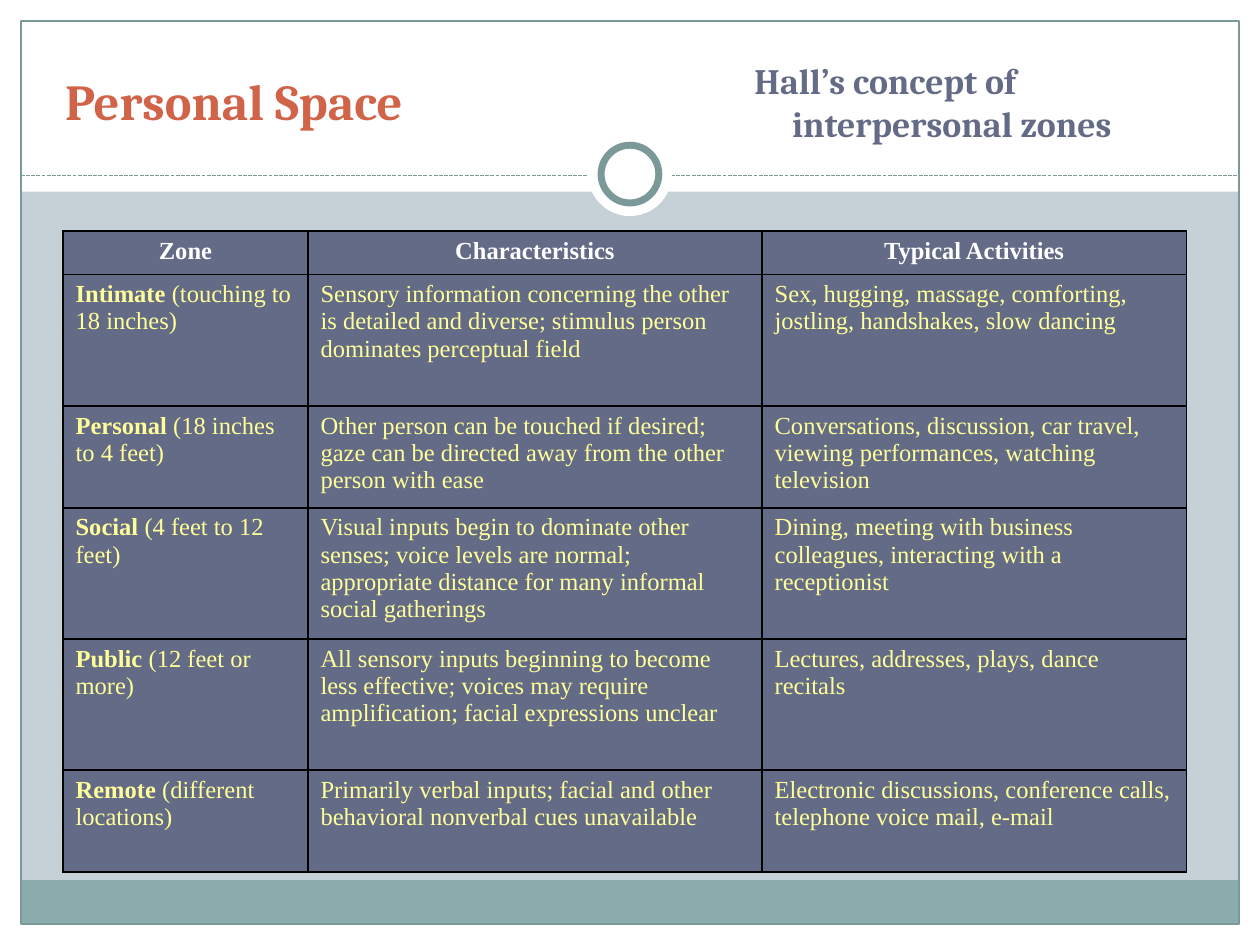
from typing import NamedTuple, Optional

from lxml import etree
from pptx import Presentation
from pptx.dml.color import RGBColor
from pptx.enum.dml import MSO_LINE
from pptx.enum.shapes import MSO_CONNECTOR, MSO_SHAPE
from pptx.enum.text import MSO_ANCHOR, MSO_AUTO_SIZE, PP_ALIGN
from pptx.oxml.ns import qn
from pptx.util import Pt

RECTANGLE, OVAL = MSO_SHAPE.RECTANGLE, MSO_SHAPE.OVAL
STRAIGHT = MSO_CONNECTOR.STRAIGHT
DASHED = MSO_LINE.SQUARE_DOT
LEFT, CENTER = PP_ALIGN.LEFT, PP_ALIGN.CENTER
BOTTOM = MSO_ANCHOR.BOTTOM
NO_AUTOFIT = MSO_AUTO_SIZE.NONE
TITLE_ONLY = 5

HEADING_FONT, TABLE_FONT = "Cambria", "Times New Roman"
COLORS = {
    "background": "C5D1D7", "white": "FFFFFF", "footer": "8CADAE",
    "frame": "7C999A", "title": "D16349", "slate": "646B86",
    "cell text": "FFFF99", "border": "000000",
}
WIDTH, HEIGHT, MARGIN = 720, 540, 12


class Panel(NamedTuple):
    left: float
    top: float
    width: float
    height: float
    fill: Optional[str] = None
    line: Optional[str] = None
    line_width: float = 0.75
    kind: int = RECTANGLE


class Zone(NamedTuple):
    name: str
    distance: str
    characteristics: str
    activities: str
    height: float


INNER_WIDTH = WIDTH - 2 * MARGIN
FRAME_PANELS = [
    Panel(0, HEIGHT - MARGIN, WIDTH, MARGIN, "white"),
    Panel(0, 0, WIDTH, 109.5, "white"),
    Panel(0, 0, MARGIN, HEIGHT, "white"),
    Panel(WIDTH - MARGIN, 0, MARGIN, HEIGHT, "white"),
    Panel(MARGIN, 503, INNER_WIDTH, 25, "footer"),
    Panel(MARGIN, MARGIN, INNER_WIDTH, HEIGHT - 2 * MARGIN, line="frame"),
]
RING_PANELS = [
    Panel(336, 75.5, 48, 48, "white", kind=OVAL),
    Panel(343.5, 83, 33, 33, "white", "frame", 4, OVAL),
]

HEADERS = ["Zone", "Characteristics", "Typical Activities"]
HEADER_HEIGHT = 25
COLUMN_WIDTHS = [140, 259.5, 242.5]
ZONES = [
    Zone("Intimate", " (touching to 18 inches)",
         "Sensory information concerning the other is detailed and diverse; "
         "stimulus person dominates perceptual field",
         "Sex, hugging, massage, comforting, jostling, handshakes, slow dancing", 75),
    Zone("Personal", " (18 inches to 4 feet)",
         "Other person can be touched if desired; gaze can be directed away "
         "from the other person with ease",
         "Conversations, discussion, car travel, viewing performances, "
         "watching television", 58.25),
    Zone("Social", " (4 feet to 12 feet)",
         "Visual inputs begin to dominate other senses; voice levels are normal; "
         "appropriate distance for many informal social gatherings",
         "Dining, meeting with business colleagues, interacting with a "
         "receptionist", 75),
    Zone("Public", " (12 feet or more)",
         "All sensory inputs beginning to become less effective; voices may "
         "require amplification; facial expressions unclear",
         "Lectures, addresses, plays, dance recitals", 75),
    Zone("Remote", " (different locations)",
         "Primarily verbal inputs; facial and other behavioral nonverbal cues "
         "unavailable",
         "Electronic discussions, conference calls, telephone voice mail, "
         "e-mail", 58.25),
]


def rgb(name: str) -> RGBColor:
    return RGBColor.from_string(COLORS[name])


def add_run(paragraph, text: str, *, size: float = 14, font: str = TABLE_FONT,
            color: str = "cell text", bold: bool = False) -> None:
    run = paragraph.add_run()
    run.text = text
    run.font.size = Pt(size)
    run.font.name = font
    run.font.bold = bold
    run.font.color.rgb = rgb(color)


def add_panel(slide, panel: Panel) -> None:
    shape = slide.shapes.add_shape(
        panel.kind, Pt(panel.left), Pt(panel.top), Pt(panel.width), Pt(panel.height))
    shape.shadow.inherit = False
    if panel.fill:
        shape.fill.solid()
        shape.fill.fore_color.rgb = rgb(panel.fill)
    else:
        shape.fill.background()
    if panel.line:
        shape.line.color.rgb = rgb(panel.line)
        shape.line.width = Pt(panel.line_width)
    else:
        shape.line.fill.background()


def add_divider(slide, top: float) -> None:
    line = slide.shapes.add_connector(
        STRAIGHT, Pt(MARGIN), Pt(top), Pt(WIDTH - MARGIN), Pt(top))
    line.line.color.rgb = rgb("frame")
    line.line.width = Pt(0.75)
    line.line.dash_style = DASHED
    etree.SubElement(line.element.spPr, qn("a:effectLst"))


def format_cell(cell) -> None:
    properties = cell._tc.get_or_add_tcPr()
    for side in ("lnL", "lnR", "lnT", "lnB"):
        border = etree.SubElement(properties, qn(f"a:{side}"), w=str(Pt(1)))
        fill = etree.SubElement(border, qn("a:solidFill"))
        etree.SubElement(fill, qn("a:srgbClr"), val=COLORS["border"])
    cell.fill.solid()
    cell.fill.fore_color.rgb = rgb("slate")


def add_zone_table(slide) -> None:
    heights = [HEADER_HEIGHT] + [zone.height for zone in ZONES]
    table = slide.shapes.add_table(
        len(heights), len(HEADERS), Pt(36), Pt(132),
        Pt(sum(COLUMN_WIDTHS)), Pt(sum(heights))).table
    for column, width in zip(table.columns, COLUMN_WIDTHS):
        column.width = Pt(width)
    for row, height in zip(table.rows, heights):
        row.height = Pt(height)
    for cell in table.iter_cells():
        format_cell(cell)

    for column, header in enumerate(HEADERS):
        paragraph = table.cell(0, column).text_frame.paragraphs[0]
        paragraph.alignment = CENTER
        add_run(paragraph, header, color="white", bold=True)
    for row, zone in enumerate(ZONES, start=1):
        first, second, third = (
            table.cell(row, column).text_frame.paragraphs[0] for column in range(3))
        add_run(first, zone.name, bold=True)
        add_run(first, zone.distance)
        add_run(second, zone.characteristics)
        add_run(third, zone.activities)


def place_title(slide) -> None:
    title = slide.shapes.title
    title.left, title.top, title.width, title.height = Pt(30), Pt(24), Pt(264), Pt(54)
    frame = title.text_frame
    frame.auto_size = NO_AUTOFIT
    frame.vertical_anchor = BOTTOM
    paragraph = frame.paragraphs[0]
    paragraph.alignment = LEFT
    add_run(paragraph, "Personal Space", size=28.8, font=HEADING_FONT,
            color="title", bold=True)
    # Bring the title in front of the white header band
    slide.shapes.element.append(title.element)


def add_subtitle(slide) -> None:
    box = slide.shapes.add_textbox(Pt(402), Pt(30), Pt(279), Pt(72))
    box.text_frame.word_wrap = True
    paragraph = box.text_frame.paragraphs[0]
    properties = paragraph._p.get_or_add_pPr()
    properties.set("marL", str(Pt(43.5)))
    properties.set("indent", str(Pt(-21.5)))
    add_run(paragraph, "Hall’s concept of interpersonal zones", size=20.4,
            font=HEADING_FONT, color="slate", bold=True)


def main() -> None:
    presentation = Presentation()
    presentation.slide_width, presentation.slide_height = Pt(WIDTH), Pt(HEIGHT)
    slide = presentation.slides.add_slide(presentation.slide_layouts[TITLE_ONLY])
    slide.background.fill.solid()
    slide.background.fill.fore_color.rgb = rgb("background")

    # Frame, dashed divider and ring
    for panel in FRAME_PANELS:
        add_panel(slide, panel)
    add_divider(slide, 100.5)
    for panel in RING_PANELS:
        add_panel(slide, panel)

    # Headings and table
    place_title(slide)
    add_subtitle(slide)
    add_zone_table(slide)
    presentation.save("out.pptx")


if __name__ == "__main__":
    main()
